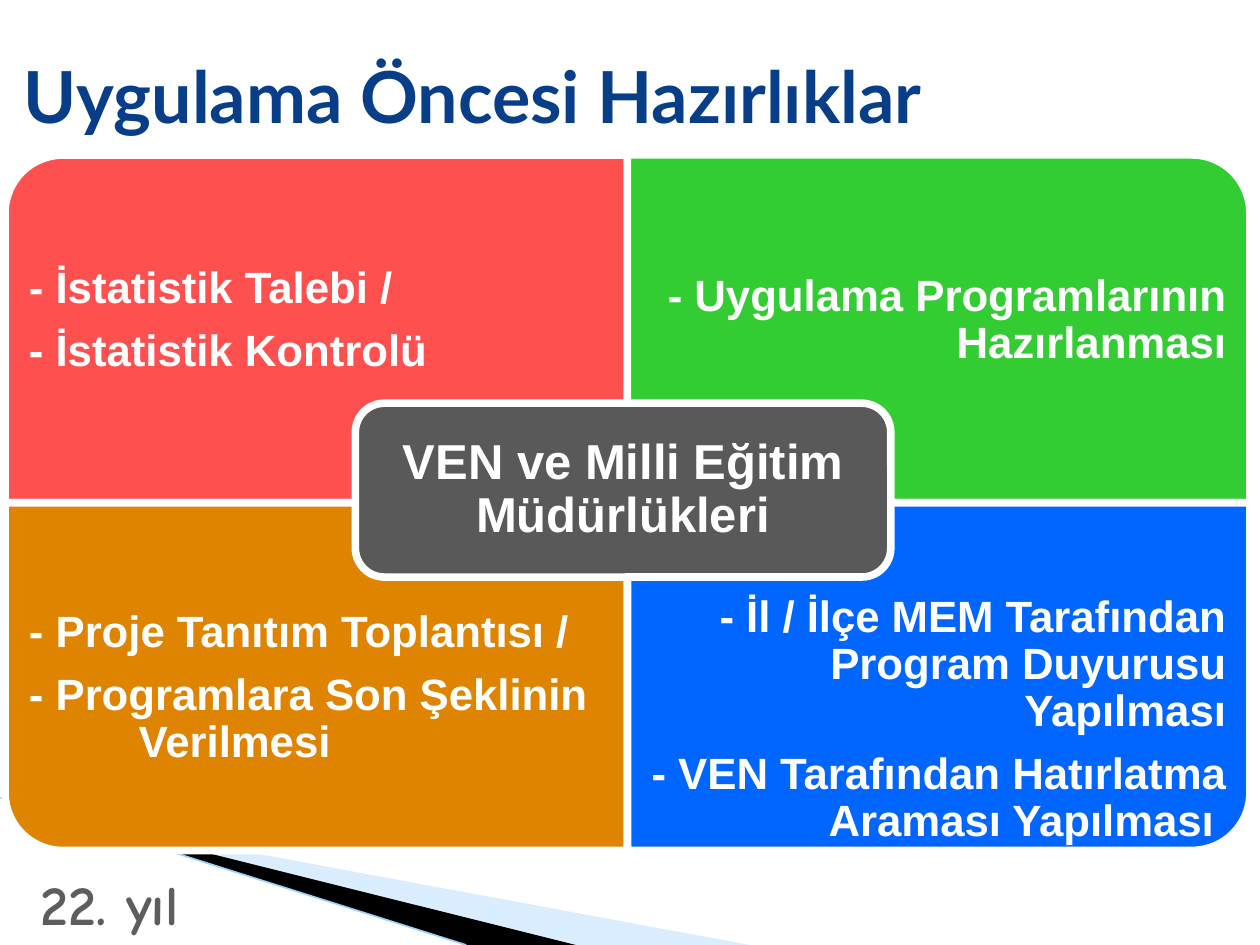
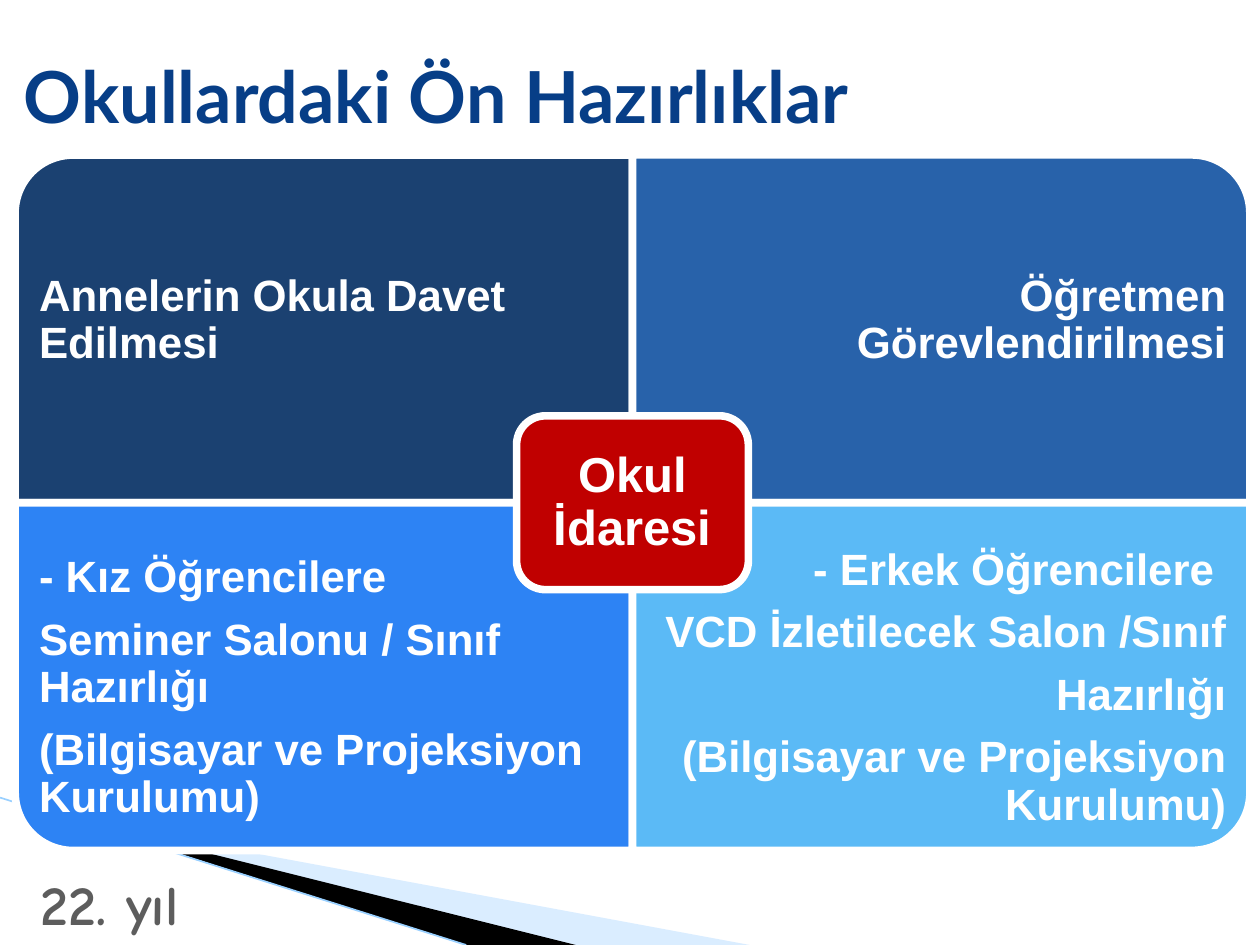
from lxml import etree
from pptx import Presentation
from pptx.dml.color import RGBColor
from pptx.enum.shapes import MSO_CONNECTOR, MSO_SHAPE
from pptx.enum.text import MSO_ANCHOR, PP_ALIGN
from pptx.oxml.ns import qn
from pptx.util import Inches, Pt

LEFT, MID, RIGHT = PP_ALIGN.LEFT, PP_ALIGN.CENTER, PP_ALIGN.RIGHT
CENTRE = MSO_ANCHOR.MIDDLE
ROUND, CORNER = MSO_SHAPE.ROUNDED_RECTANGLE, MSO_SHAPE.ROUND_1_RECTANGLE
STRAIGHT = MSO_CONNECTOR.STRAIGHT

HEX = {
    "white": "FFFFFF", "title": "073E87", "year": "5D5D5D",
    "pale": "A3D3FF", "black": "000000", "line": "99D0FF",
    "red": "FF5050", "green": "33CC33", "orange": "DE8400", "blue": "0066FF",
    "grey": "595959", "navy": "1B4171", "steel": "2862AA",
    "bright": "2D83F4", "sky": "5BBAF6", "crimson": "C00000",
}
FONTS = {
    "title": {"name": "Lato", "size": Pt(41), "bold": True},
    "year": {"name": "Comic Neue", "size": Pt(32), "bold": True},
    "cell": {"name": "Arial", "size": Pt(25), "bold": True},
    "core": {"name": "Arial", "size": Pt(28), "bold": True},
}
SIDES = ("left", "top", "right", "bottom")
TURNS = (270, 0, 180, 90)
TOP, HIGH, TEXT = 1.23, 2.76, 2.07
DOWN, UP = 0.28, -0.25
HANG = 0.87

PAGES = [
    {
        "title": "Uygulama Öncesi Hazırlıklar",
        "left": 0.04, "wide": 4.94,
        "cells": [
            ("red", DOWN, ["- İstatistik Talebi /", "- İstatistik Kontrolü"]),
            ("green", DOWN, ["- Uygulama Programlarının Hazırlanması"]),
            ("orange", UP, ["- Proje Tanıtım Toplantısı /",
                            "- Programlara Son Şeklinin Verilmesi"]),
            ("blue", 0, ["- İl / İlçe MEM Tarafından Program Duyurusu Yapılması",
                         "- VEN Tarafından Hatırlatma Araması Yapılması "]),
        ],
        "hang": "- Programlara Son Şeklinin Verilmesi",
        "core": ("grey", (2.82, 3.2, 4.25, 1.38),
                 "VEN ve Milli Eğitim Müdürlükleri"),
    },
    {
        "title": "Okullardaki Ön Hazırlıklar",
        "left": 0.12, "wide": 4.9,
        "cells": [
            ("navy", DOWN, ["Annelerin Okula Davet Edilmesi"]),
            ("steel", DOWN, ["Öğretmen Görevlendirilmesi"]),
            ("bright", UP, ["- Kız Öğrencilere",
                            "Seminer Salonu / Sınıf Hazırlığı",
                            "(Bilgisayar ve Projeksiyon Kurulumu)"]),
            ("sky", UP, ["- Erkek Öğrencilere ", "VCD İzletilecek Salon /Sınıf",
                         "Hazırlığı", "(Bilgisayar ve Projeksiyon Kurulumu)"]),
        ],
        "hang": None,
        "core": ("crimson", (4.1, 3.3, 1.84, 1.38), "Okul İdaresi"),
    },
]


def tint(name):
    """Return the named colour."""
    return RGBColor.from_string(HEX[name])


def span(box):
    """Turn a box in inches into lengths."""
    return [Inches(n) for n in box]


def paint(shape, fill, edge=None):
    """Fill a shape, draw its edge and drop its shadow."""
    shape.shadow.inherit = False
    shape.fill.solid()
    shape.fill.fore_color.rgb = tint(fill)
    if edge:
        shape.line.color.rgb = tint(edge)
        shape.line.width = Pt(4.33)
    else:
        shape.line.fill.background()


def write(shape, lines, style, color, align, pad=0.1, space=None, hang=None):
    """Write styled paragraphs into a shape."""
    frame = shape.text_frame
    frame.word_wrap = True
    frame.vertical_anchor = CENTRE
    for side in SIDES:
        setattr(frame, "margin_" + side, Inches(pad))
    frame.text = "\n".join(lines)
    for para in frame.paragraphs:
        para.alignment = align
        if space:
            para.line_spacing = 0.9
            para.space_after = Pt(space)
        if para.text == hang:
            props = para._p.get_or_add_pPr()
            props.set("marL", str(Inches(HANG)))
            props.set("indent", str(-Inches(HANG)))
        for key, value in FONTS[style].items():
            setattr(para.font, key, value)
        para.font.color.rgb = tint(color)


def wedge(slide, points, fill, alpha=100):
    """Draw one slanted strip of the footer."""
    build = slide.shapes.build_freeform(*span(points[0]), scale=1.0)
    build.add_line_segments([span(point) for point in points[1:]])
    shape = build.convert_to_shape()
    paint(shape, fill)
    if alpha < 100:
        color = shape._element.spPr.find(".//" + qn("a:srgbClr"))
        etree.SubElement(color, qn("a:alpha"), val=str(alpha * 1000))


def footer(slide):
    """Draw the strips, the thin line and the year."""
    wedge(slide, [(0.55, 6.5), (5.95, 7.5), (4.56, 7.5)], "pale", 40)
    wedge(slide, [(0.53, 6.49), (4.57, 7.5), (3.7, 7.5)], "black")
    rule = slide.shapes.add_connector(STRAIGHT, *span((0, 6.33, 3.7, 7.5)))
    rule.line.color.rgb = tint("line")
    rule.line.width = Pt(0.95)
    etree.SubElement(rule._element.spPr, qn("a:effectLst"))
    year = slide.shapes.add_textbox(*span((0, 6.85, 1.74, 0.64)))
    write(year, ["22. yıl"], "year", "year", MID)


def head(slide, text, box):
    """Place and format the title."""
    title = slide.shapes.title
    for key, value in zip(("left", "top", "width", "height"), span(box)):
        setattr(title, key, value)
    write(title, [text], "title", "title", LEFT)


def cell(slide, box, turn, fill, shift, lines, align, hang):
    """Draw a quarter with one round corner and its text."""
    left, top, wide, high = box
    long, tall = (high, wide) if turn % 180 else (wide, high)
    place = (left + (wide - long) / 2, top + (high - tall) / 2, long, tall)
    shape = slide.shapes.add_shape(CORNER, *span(place))
    shape.rotation = turn
    paint(shape, fill, "white")
    start = top if top == TOP else top + high - TEXT
    note = slide.shapes.add_textbox(*span((left, start + shift, wide, TEXT)))
    write(note, lines, "cell", "white", align, 0.19, 8.75, hang)


def grid(slide, page):
    """Lay out the four quarters and the core."""
    wide = page["wide"]
    for spot, (fill, shift, lines) in enumerate(page["cells"]):
        row, col = divmod(spot, 2)
        box = (page["left"] + col * wide, TOP + row * HIGH, wide, HIGH)
        align = RIGHT if col else LEFT
        cell(slide, box, TURNS[spot], fill, shift, lines, align, page["hang"])
    fill, box, text = page["core"]
    core = slide.shapes.add_shape(ROUND, *span(box))
    paint(core, fill, "white")
    write(core, [text], "core", "white", MID, 0.12, 9.8)


def main():
    """Build and save the slides."""
    deck = Presentation()
    deck.slide_width, deck.slide_height = span((10, 7.5))
    for page in PAGES:
        slide = deck.slides.add_slide(deck.slide_layouts[5])
        footer(slide)
        head(slide, page["title"], (0.09, 0.13, 9, 1.25))
        grid(slide, page)
    deck.save("out.pptx")


if __name__ == "__main__":
    main()
